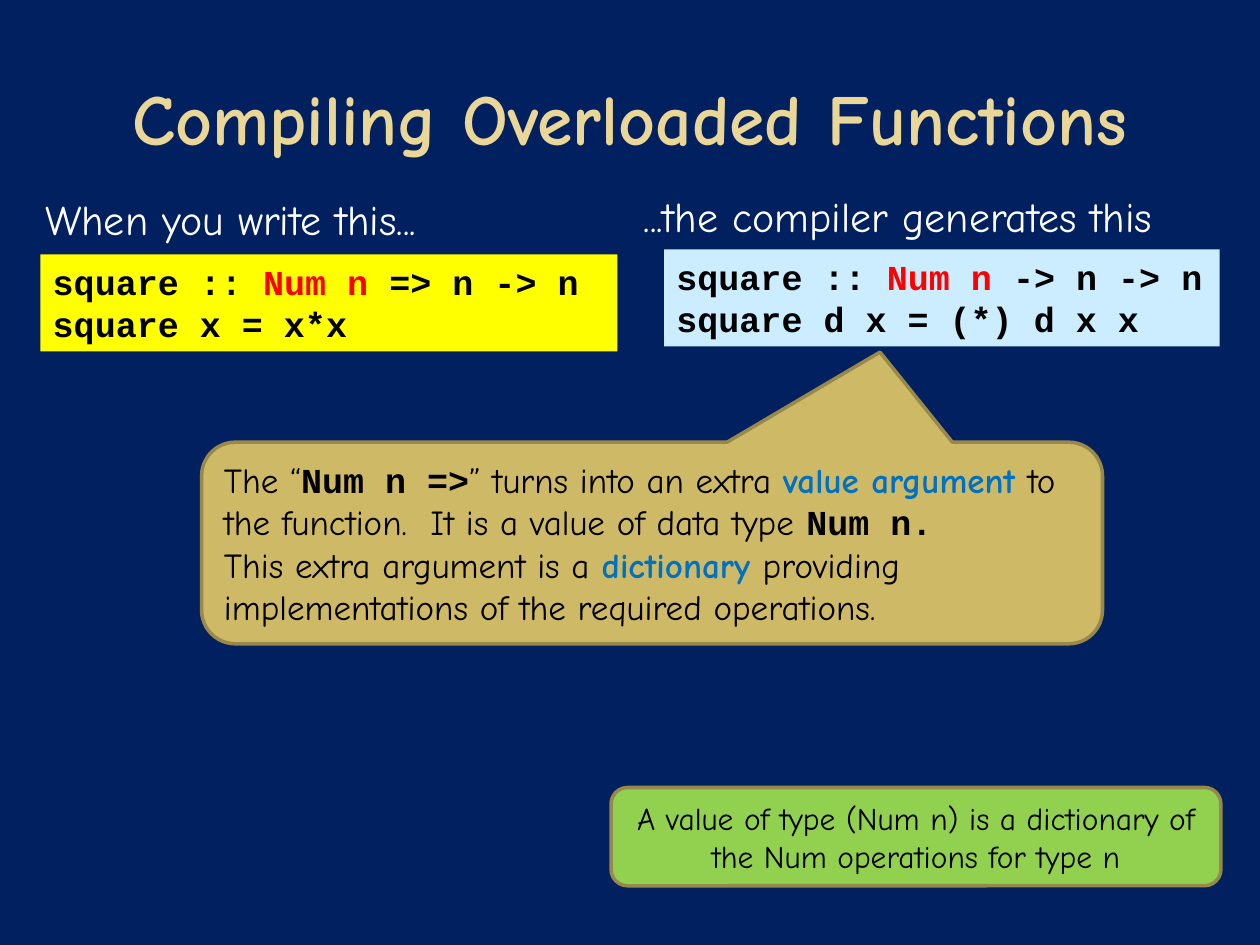
"""Build a slide on how overloaded functions are compiled."""
import dataclasses

import pptx
import pptx.dml.color
import pptx.enum.shapes
import pptx.enum.text
import pptx.util

KIND = pptx.enum.shapes.MSO_SHAPE
ALIGN = pptx.enum.text.PP_ALIGN
ANCHOR = pptx.enum.text.MSO_ANCHOR
PX = 9144


@dataclasses.dataclass(frozen=True)
class Theme:
    back: str = "002060"
    gold: str = "EAD696"
    white: str = "FFFFFF"
    black: str = "000000"
    red: str = "FF0000"
    blue: str = "0070C0"
    yellow: str = "FFFF00"
    sky: str = "CCECFF"
    sand: str = "CEB966"
    edge: str = "98894B"
    green: str = "92D050"
    prose: str = "Comic Neue"
    mono: str = "Courier New"
    title: int = 41
    head: int = 24
    body: int = 20
    note: int = 18


def tint(code):
    return pptx.dml.color.RGBColor.from_string(code)


class Deck:
    def __init__(self, theme):
        self.theme = theme
        self.file = pptx.Presentation()
        self.file.slide_width = 1000 * PX
        self.file.slide_height = 750 * PX
        self.slide = self.file.slides.add_slide(self.file.slide_layouts[6])
        fill = self.slide.background.fill
        fill.solid()
        fill.fore_color.rgb = tint(theme.back)

    def code(self, text, color=None):
        return text, self.theme.mono, color or self.theme.black, True

    def prose(self, text, color=None, bold=False):
        return text, self.theme.prose, color or self.theme.black, bold

    def key(self, text):
        return self.prose(text, self.theme.blue, True)

    def fill_text(self, shape, lines, size, align=ALIGN.LEFT,
                  anchor=ANCHOR.TOP):
        frame = shape.text_frame
        frame.word_wrap = True
        frame.vertical_anchor = anchor
        for i, line in enumerate(lines):
            para = frame.add_paragraph() if i else frame.paragraphs[0]
            para.alignment = align
            for text, face, color, bold in line:
                run = para.add_run()
                run.text = text
                run.font.name = face
                run.font.size = pptx.util.Pt(size)
                run.font.bold = bold
                run.font.color.rgb = tint(color)

    def label(self, box, run, size, **place):
        shape = self.slide.shapes.add_textbox(*(n * PX for n in box))
        self.fill_text(shape, [[run]], size, **place)

    def panel(self, kind, box, fill, lines, size, edge=None, tune=(), **place):
        shape = self.slide.shapes.add_shape(kind, *(n * PX for n in box))
        shape.shadow.inherit = False
        for i, value in enumerate(tune):
            shape.adjustments[i] = value
        shape.fill.solid()
        shape.fill.fore_color.rgb = tint(fill)
        if edge:
            shape.line.color.rgb = tint(edge)
            shape.line.width = pptx.util.Pt(2)
        else:
            shape.line.fill.background()
        self.fill_text(shape, lines, size, **place)

    def sample(self, box, fill, tail, last):
        first = [self.code("square :: "), self.code("Num n", self.theme.red),
                 self.code(tail)]
        self.panel(KIND.RECTANGLE, box, fill, [first, [self.code(last)]],
                   self.theme.body)


def main():
    look = Theme()
    deck = Deck(look)
    deck.label((50, 30, 900, 125),
               deck.prose("Compiling Overloaded Functions", look.gold, True),
               look.title, align=ALIGN.CENTER, anchor=ANCHOR.MIDDLE)

    deck.sample((32, 202, 458, 77), look.yellow, " => n -> n",
                "square x = x*x")
    deck.sample((527, 198, 441, 77), look.sky, " -> n -> n",
                "square d x = (*) d x x")

    lines = [
        [deck.prose("The “"), deck.code("Num n =>"),
         deck.prose("” turns into an extra "), deck.key("value argument "),
         deck.prose("to the function.  It is a value of data type "),
         deck.code("Num n.")],
        [deck.prose("This extra argument is a "), deck.key("dictionary "),
         deck.prose("providing implementations of the required operations.")],
    ]
    deck.panel(KIND.ROUNDED_RECTANGULAR_CALLOUT, (160, 351, 715, 160),
               look.sand, lines, look.body, edge=look.edge,
               tune=(0.253, -0.947, 0.167), anchor=ANCHOR.MIDDLE)

    deck.label((26, 149, 363, 50),
               deck.prose("When you write this...", look.white), look.head)
    deck.label((501, 146, 479, 50),
               deck.prose("...the compiler generates this", look.white),
               look.head)

    note = deck.prose("A value of type (Num n) is a dictionary of "
                      "the Num operations for type n")
    deck.panel(KIND.ROUNDED_RECTANGLE, (485, 625, 484, 78), look.green,
               [[note]], look.note, edge=look.edge,
               align=ALIGN.CENTER, anchor=ANCHOR.MIDDLE)
    deck.file.save("out.pptx")


if __name__ == "__main__":
    main()
